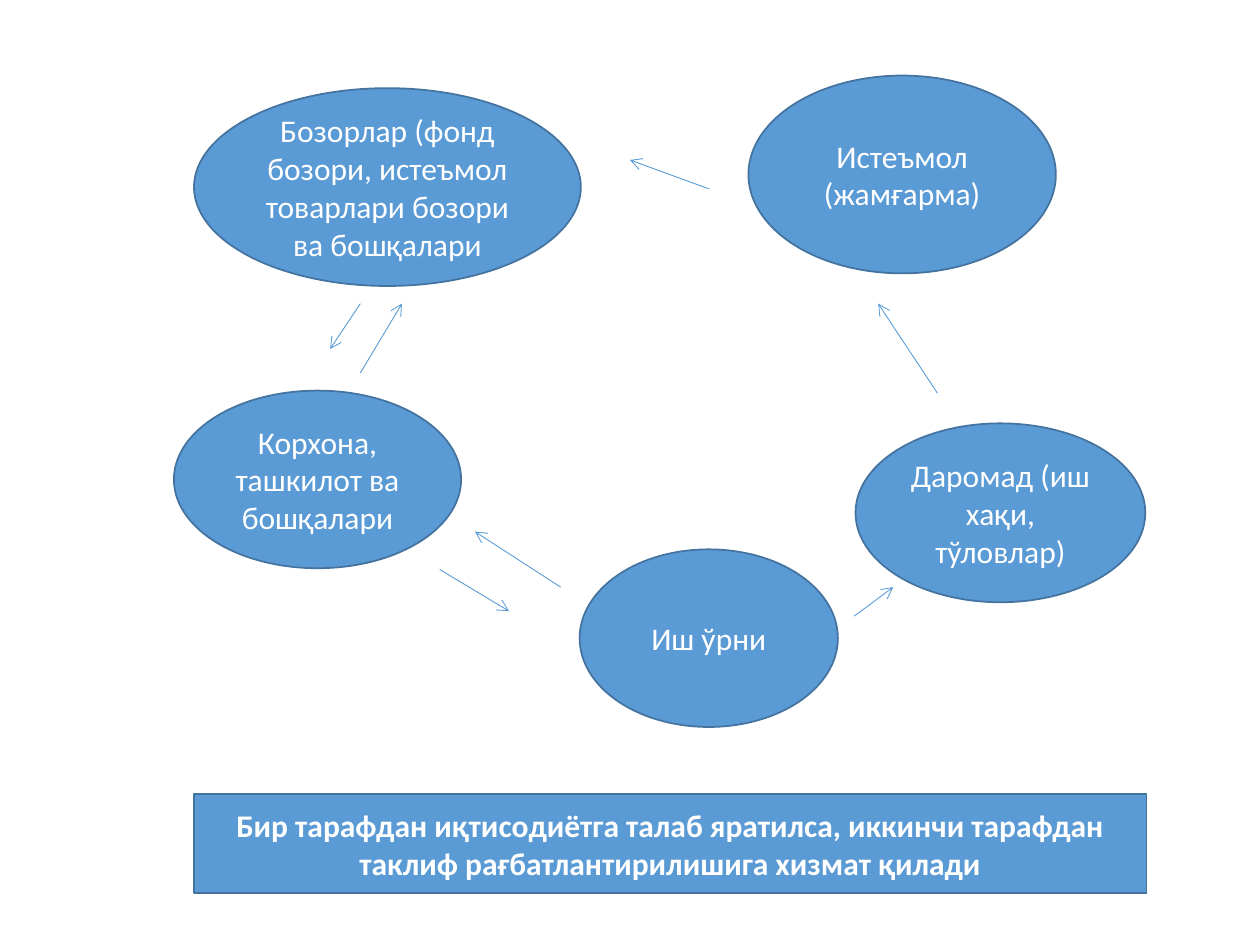
from lxml.etree import SubElement
from pptx import Presentation
from pptx.dml.color import RGBColor
from pptx.enum.shapes import MSO_CONNECTOR, MSO_SHAPE
from pptx.enum.text import MSO_ANCHOR, PP_ALIGN
from pptx.oxml.ns import qn
from pptx.util import Inches, Pt

BLUE = RGBColor(0x5B, 0x9B, 0xD5)
DARK_BLUE = RGBColor(0x43, 0x73, 0x9E)
WHITE = RGBColor(0xFF, 0xFF, 0xFF)

# The slide is a grid of 100 columns by 75 rows of square cells
COLUMNS, ROWS = 100, 75
CELL = Inches(0.1)

# Stages of the cycle: text, column, row, columns wide, rows high
STAGES = [
    ("Иш ўрни", 46, 43.6, 20.5, 14.1),
    ("Даромад (иш хақи, тўловлар)", 67.9, 33.6, 23, 14.2),
    ("Истеъмол (жамғарма)", 59.4, 6, 24.4, 15.7),
    ("Бозорлар (фонд бозори, истеъмол товарлари бозори ва бошқалари",
     15.4, 7, 30.7, 15.7),
    ("Корхона, ташкилот ва бошқалари", 13.8, 31, 22.8, 14.1),
]

# Flows between the stages: start and end as (column, row)
FLOWS = [
    ((67.8, 48.9), (70.9, 46.6)),  # job to income
    ((74.4, 31.2), (69.7, 24.1)),  # income to consumption
    ((56.3, 15), (50, 12.7)),      # consumption to markets
    ((28.6, 24.1), (26.2, 27.7)),  # markets to enterprise
    ((28.6, 29.6), (31.9, 24.1)),  # enterprise to markets
    ((34.9, 45.2), (40.4, 48.5)),  # enterprise to job
    ((44.5, 46.6), (37.7, 42.2)),  # job to enterprise
]

CONCLUSION = ("Бир тарафдан иқтисодиётга талаб яратилса, иккинчи тарафдан "
              "таклиф рағбатлантирилишига хизмат қилади")


def cells(*counts):
    return [round(count * CELL) for count in counts]


def add_box(slide, outline, text, column, row, wide, high, bold=False):
    box = slide.shapes.add_shape(outline, *cells(column, row, wide, high))
    box.shadow.inherit = False
    box.fill.solid()
    box.fill.fore_color.rgb = BLUE
    box.line.color.rgb = DARK_BLUE
    box.line.width = Pt(1)

    frame = box.text_frame
    frame.word_wrap = True
    frame.vertical_anchor = MSO_ANCHOR.MIDDLE
    paragraph = frame.paragraphs[0]
    paragraph.alignment = PP_ALIGN.CENTER
    run = paragraph.add_run()
    run.text = text
    run.font.name = "Calibri"
    run.font.size = Pt(18)
    run.font.bold = bold
    run.font.color.rgb = WHITE


def add_arrow(slide, start, end):
    arrow = slide.shapes.add_connector(MSO_CONNECTOR.STRAIGHT, *cells(*start, *end))
    arrow.line.color.rgb = BLUE
    arrow.line.width = Pt(0.5)
    # Open arrowhead at the end, and no shadow
    SubElement(arrow.line._get_or_add_ln(), qn("a:tailEnd"), type="arrow")
    SubElement(arrow._element.spPr, qn("a:effectLst"))


def main():
    deck = Presentation()
    deck.slide_width, deck.slide_height = cells(COLUMNS, ROWS)
    slide = deck.slides.add_slide(deck.slide_layouts[6])

    # Cycle of stages and flows
    for stage in STAGES:
        add_box(slide, MSO_SHAPE.OVAL, *stage)
    for start, end in FLOWS:
        add_arrow(slide, start, end)

    # Conclusion under the cycle
    add_box(slide, MSO_SHAPE.RECTANGLE, CONCLUSION, 15.4, 63, 75.6, 7.9, bold=True)

    deck.save("out.pptx")


if __name__ == "__main__":
    main()
